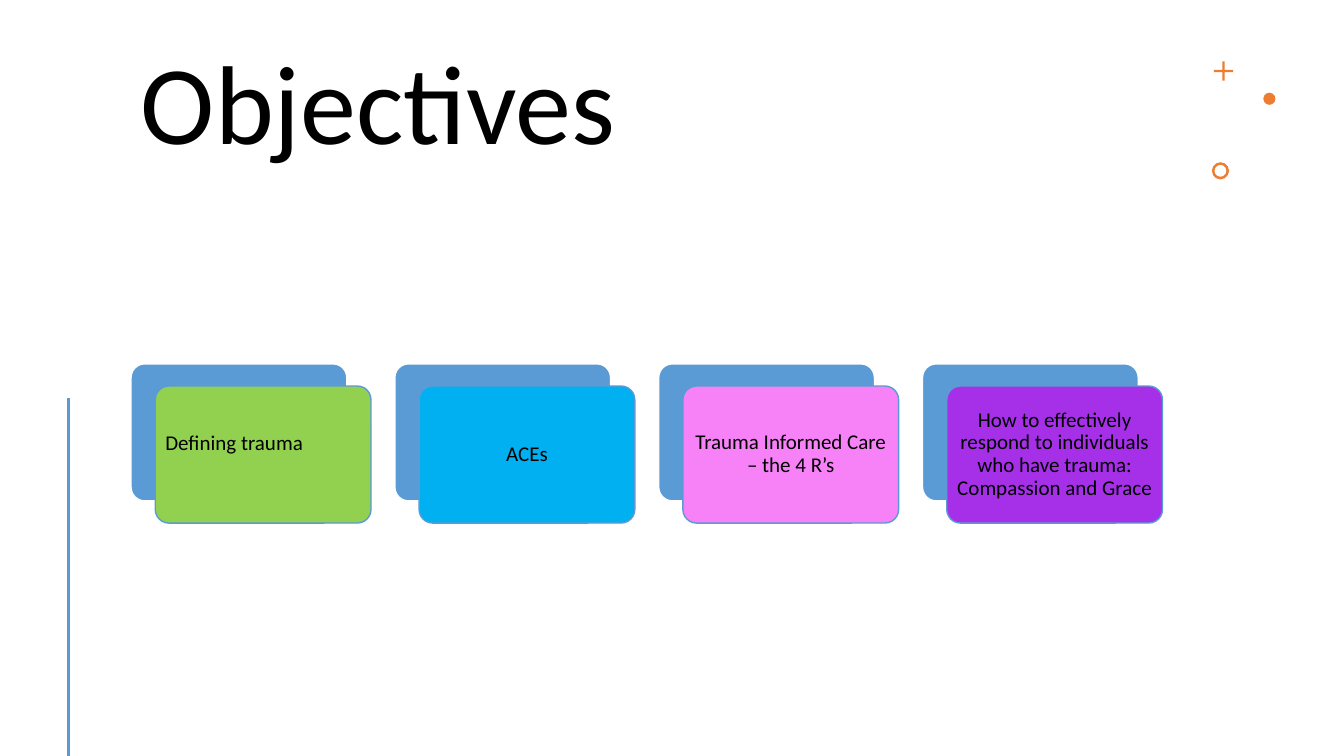
from dataclasses import dataclass

from lxml import etree
from pptx import Presentation
from pptx.dml.color import RGBColor
from pptx.enum.shapes import MSO_CONNECTOR, MSO_SHAPE
from pptx.enum.text import MSO_ANCHOR, PP_ALIGN
from pptx.oxml.ns import qn
from pptx.util import Inches, Pt

ROUNDED, CROSS = MSO_SHAPE.ROUNDED_RECTANGLE, MSO_SHAPE.CROSS
OVAL, DONUT = MSO_SHAPE.OVAL, MSO_SHAPE.DONUT
STRAIGHT = MSO_CONNECTOR.STRAIGHT
MIDDLE = MSO_ANCHOR.MIDDLE
LEFT, CENTER = PP_ALIGN.LEFT, PP_ALIGN.CENTER


@dataclass(frozen=True)
class Theme:
    font: str = "Calibri"
    title_size: int = 80
    card_size: int = 15
    spacing: float = 0.9
    text: str = "000000"
    accent: str = "5B9BD5"
    mark: str = "ED7D31"
    paper: str = "FFFFFF"


THEME = Theme()
TITLE = "Objectives"
OBJECTIVES = [
    ("Defining trauma", "92D050", LEFT, 0.28),
    ("ACEs", "00B0F0", CENTER, 0.06),
    ("Trauma Informed Care – the 4 R’s", "F781F7", CENTER, 0.06),
    ("How to effectively respond to individuals who have trauma: "
     "Compassion and Grace", "A630E8", CENTER, 0.06),
]
MARKS = [
    (CROSS, 12.04, 0.61, 0.19, 0.44),
    (OVAL, 12.53, 0.92, 0.12, None),
    (DONUT, 12.02, 1.61, 0.17, 0.15),
]
SLIDE_W, SLIDE_H = 13.33, 7.5
MARGIN, CONTENT_W = 1.3, 10.23
CARD_W, CARD_H, CARD_TOP = 2.14, 1.36, 3.61
SHIFT_X, SHIFT_Y = 0.24, 0.22
PITCH = (CONTENT_W - CARD_W - SHIFT_X) / (len(OBJECTIVES) - 1)
INSET = 0.06
RULE_X, RULE_TOP = 0.68, 3.95


def rgb(value):
    return RGBColor.from_string(value)


def add_filled(s, kind, x, y, w, h, fill, line=None, adj=None):
    sp = s.shapes.add_shape(kind, Inches(x), Inches(y), Inches(w), Inches(h))
    sp.shadow.inherit = False
    sp.fill.solid()
    sp.fill.fore_color.rgb = rgb(fill)
    if line:
        sp.line.color.rgb = rgb(line)
        sp.line.width = Pt(1)
    else:
        sp.line.fill.background()
    if adj is not None:
        sp.adjustments[0] = adj
    return sp


def write(sp, text, size, align):
    tf = sp.text_frame
    tf.word_wrap = True
    tf.vertical_anchor = MIDDLE
    p = tf.paragraphs[0]
    p.alignment = align
    p.line_spacing = THEME.spacing
    r = p.add_run()
    r.text = text
    r.font.name = THEME.font
    r.font.size = Pt(size)
    r.font.color.rgb = rgb(THEME.text)
    return tf


def add_card(s, column, text, fill, align, bottom):
    x = MARGIN + column * PITCH
    add_filled(s, ROUNDED, x, CARD_TOP, CARD_W, CARD_H,
               THEME.accent, THEME.paper, 0.1)
    sp = add_filled(s, ROUNDED, x + SHIFT_X, CARD_TOP + SHIFT_Y, CARD_W, CARD_H,
                    fill, THEME.accent, 0.1)
    tf = write(sp, text, THEME.card_size, align)
    tf.margin_left = tf.margin_right = tf.margin_top = Inches(INSET)
    tf.margin_bottom = Inches(bottom)


def add_rule(s):
    line = s.shapes.add_connector(STRAIGHT, Inches(RULE_X), Inches(RULE_TOP),
                                  Inches(RULE_X), Inches(SLIDE_H))
    line.line.color.rgb = rgb(THEME.accent)
    line.line.width = Pt(2)
    etree.SubElement(line._element.spPr, qn("a:effectLst"))


def main():
    prs = Presentation()
    prs.slide_width, prs.slide_height = Inches(SLIDE_W), Inches(SLIDE_H)
    s = prs.slides.add_slide(prs.slide_layouts[6])
    title = s.shapes.add_textbox(Inches(MARGIN), Inches(0.42),
                                 Inches(CONTENT_W), Inches(1.31))
    write(title, TITLE, THEME.title_size, LEFT)
    for kind, x, y, size, adj in MARKS:
        add_filled(s, kind, x, y, size, size, THEME.mark, adj=adj)
    add_rule(s)
    for column, objective in enumerate(OBJECTIVES):
        add_card(s, column, *objective)
    prs.save("out.pptx")


if __name__ == "__main__":
    main()
